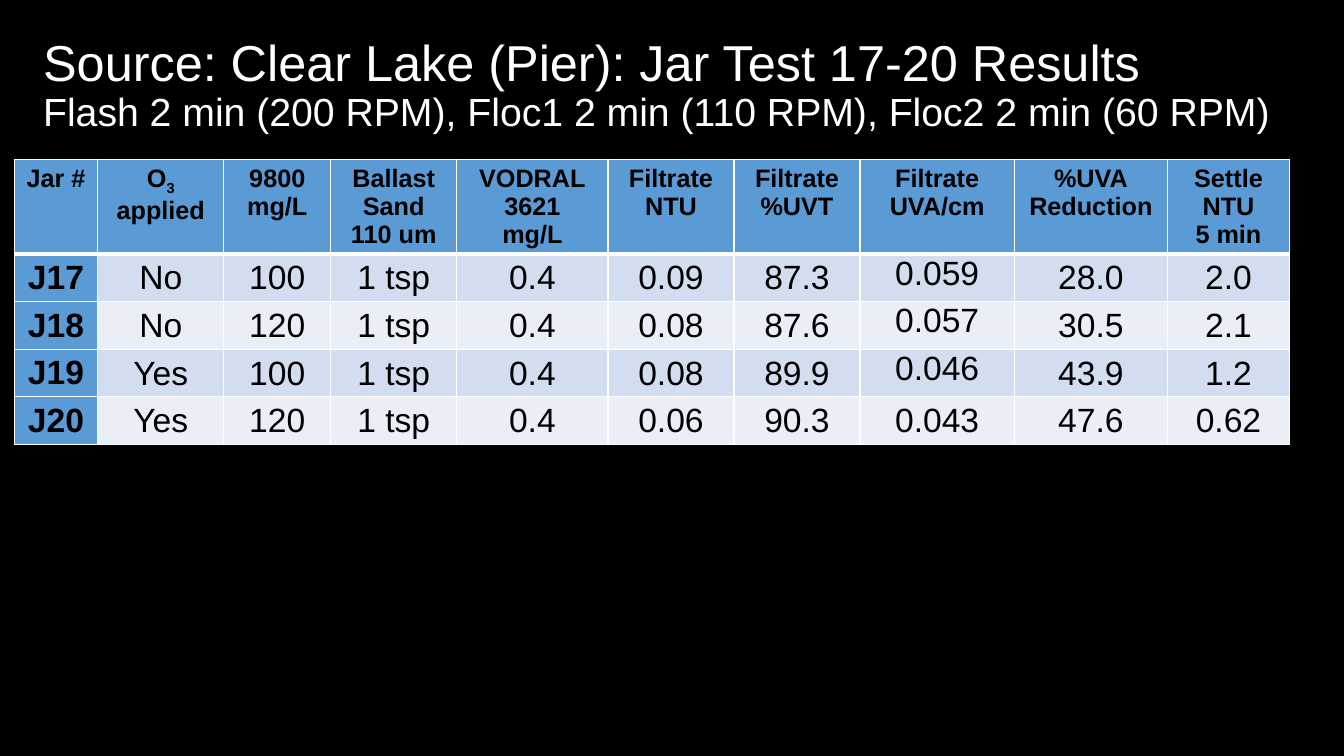
from lxml import etree
from pptx import Presentation
from pptx.dml.color import RGBColor
from pptx.enum.text import MSO_ANCHOR, PP_ALIGN
from pptx.oxml.ns import qn
from pptx.util import Inches, Pt

TITLE = [
    ("Source: Clear Lake (Pier): Jar Test 17-20 Results", 36),
    ("Flash 2 min (200 RPM), Floc1 2 min (110 RPM), Floc2 2 min (60 RPM)", 28),
]
HEADERS = [
    "Jar #", "O3\napplied", "9800\nmg/L", "Ballast\nSand\n110 um",
    "VODRAL\n3621\nmg/L", "Filtrate\nNTU", "Filtrate\n%UVT",
    "Filtrate\nUVA/cm", "%UVA\nReduction", "Settle\nNTU\n5 min",
]
RESULTS = [
    ["J17", "No", "100", "1 tsp", "0.4", "0.09", "87.3", "0.059", "28.0", "2.0"],
    ["J18", "No", "120", "1 tsp", "0.4", "0.08", "87.6", "0.057", "30.5", "2.1"],
    ["J19", "Yes", "100", "1 tsp", "0.4", "0.08", "89.9", "0.046", "43.9", "1.2"],
    ["J20", "Yes", "120", "1 tsp", "0.4", "0.06", "90.3", "0.043", "47.6", "0.62"],
]
COL_WIDTHS = [0.83, 1.25, 1.06, 1.25, 1.5, 1.25, 1.25, 1.53, 1.52, 1.21]
HEADER_HEIGHT, ROW_HEIGHT = 0.94, 0.47
TOP_ALIGNED = {(1, 7), (2, 7), (3, 7)}

FONT = "Arial"
BLACK = RGBColor(0x00, 0x00, 0x00)
WHITE = RGBColor(0xFF, 0xFF, 0xFF)
BLUE = RGBColor(0x5B, 0x9B, 0xD5)
BANDS = [RGBColor(0xEA, 0xEF, 0xF7), RGBColor(0xD2, 0xDE, 0xEF)]
CENTER = PP_ALIGN.CENTER
TOP, MIDDLE = MSO_ANCHOR.TOP, MSO_ANCHOR.MIDDLE


def style_run(r, size, color, bold=False):
    r.font.name = FONT
    r.font.size = Pt(size)
    r.font.bold = bold
    r.font.color.rgb = color


def set_borders(cell, top, bottom):
    tc_pr = cell._tc.get_or_add_tcPr()
    for side, width in (("L", 1), ("R", 1), ("T", top), ("B", bottom)):
        ln = etree.SubElement(tc_pr, qn("a:ln" + side), w=str(Pt(width)))
        fill = etree.SubElement(ln, qn("a:solidFill"))
        etree.SubElement(fill, qn("a:srgbClr"), val=str(WHITE))


def fill_cell(cell, text, row, col):
    header, label = row == 0, col == 0
    set_borders(cell, 3 if row == 1 else 1, 3 if header else 1)
    cell.fill.solid()
    cell.fill.fore_color.rgb = BLUE if header or label else BANDS[row % 2]
    if not header and not label:
        cell.margin_left = cell.margin_right = cell.margin_top = Inches(0.01)
        cell.margin_bottom = 0
        cell.vertical_anchor = TOP if (row, col) in TOP_ALIGNED else MIDDLE
    cell.text_frame.text = text
    for p in cell.text_frame.paragraphs:
        p.alignment = CENTER
        if p.text == "O3":
            p.text = "O"
            r = p.add_run()
            r.text = "3"
            r._r.get_or_add_rPr().set("baseline", "-25000")
        for r in p.runs:
            style_run(r, 18 if header else 24, BLACK, header or label)


prs = Presentation()
prs.slide_width, prs.slide_height = Inches(13.33), Inches(7.5)
s = prs.slides.add_slide(prs.slide_layouts[6])
s.background.fill.solid()
s.background.fill.fore_color.rgb = BLACK

rows = [HEADERS] + RESULTS
heights = [HEADER_HEIGHT] + [ROW_HEIGHT] * len(RESULTS)
table = s.shapes.add_table(
    len(rows), len(HEADERS), Inches(0.14), Inches(1.58),
    Inches(sum(COL_WIDTHS)), Inches(sum(heights))).table
for column, width in zip(table.columns, COL_WIDTHS):
    column.width = Inches(width)
for i, (values, height) in enumerate(zip(rows, heights)):
    table.rows[i].height = Inches(height)
    for j, text in enumerate(values):
        fill_cell(table.cell(i, j), text, i, j)

title = s.shapes.add_textbox(Inches(0.33), Inches(0.13), Inches(12.47), Inches(1.45))
tf = title.text_frame
tf.word_wrap = True
tf.vertical_anchor = MIDDLE
p = tf.paragraphs[0]
p.text = "\v".join(text for text, size in TITLE)
p.line_spacing = 0.9
for r, (text, size) in zip(p.runs, TITLE):
    style_run(r, size, WHITE)

prs.save("out.pptx")
